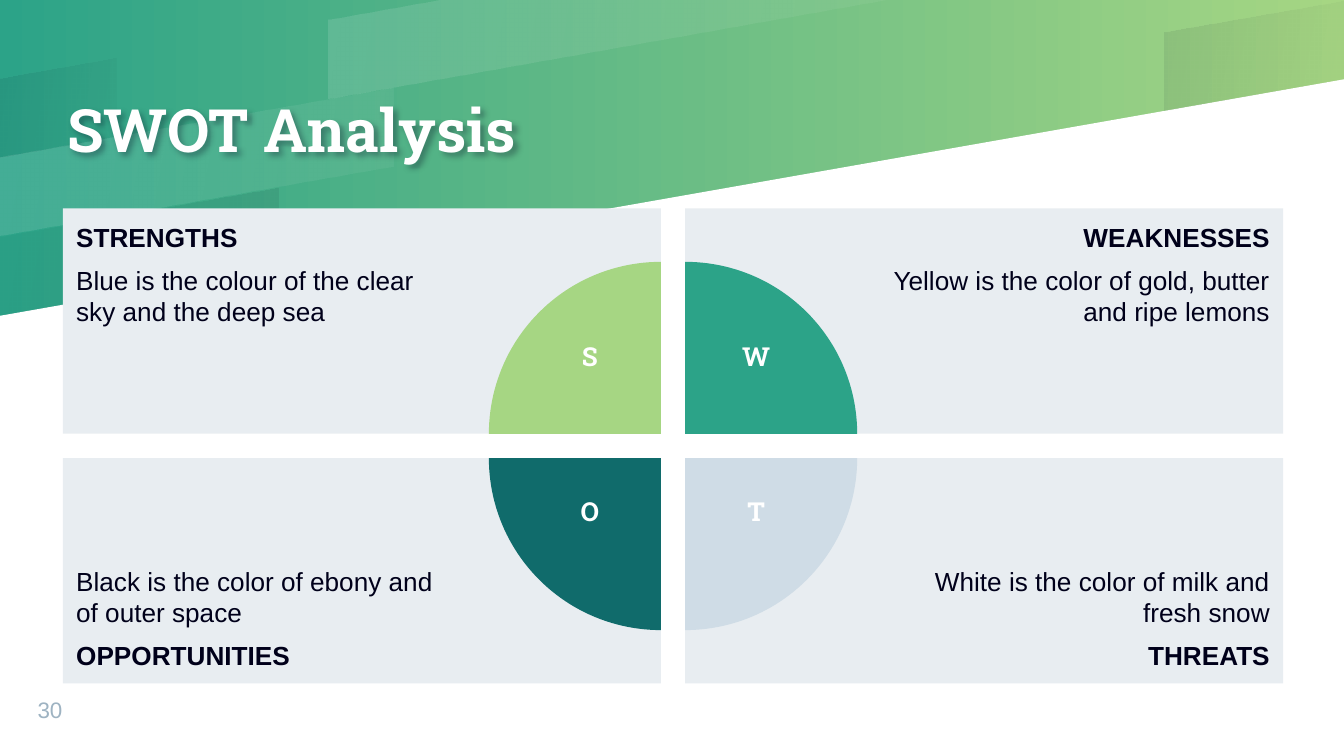
from lxml import etree
from pptx import Presentation
from pptx.dml.color import RGBColor
from pptx.enum.shapes import MSO_SHAPE
from pptx.enum.text import MSO_ANCHOR, PP_ALIGN
from pptx.oxml.ns import qn
from pptx.util import Cm, Pt

RECT, PIE = MSO_SHAPE.RECTANGLE, MSO_SHAPE.PIE
TOP, MIDDLE, BOTTOM = MSO_ANCHOR.TOP, MSO_ANCHOR.MIDDLE, MSO_ANCHOR.BOTTOM
LEFT, CENTER, RIGHT = PP_ALIGN.LEFT, PP_ALIGN.CENTER, PP_ALIGN.RIGHT

WIDE, HIGH = 25.4, 14.29
SLOPE = 0.176
INK, WHITE, GREY = "00001A", "FFFFFF", "E8EDF1"
SANS, SLAB = "Arial", "Roboto Slab"

BANDS = [
    (6.2, 16.83, 0.38, WHITE, 12, 5),
    (0, 2.21, 1.48, INK, 8, 2),
    (0, 5.26, 4.47, INK, 2, 8),
    (22, 25.4, 0.6, INK, 8, 2),
    (0, 7.44, 2.97, WHITE, 12, 5),
]
PARTS = [
    ("STRENGTHS", "Blue is the colour of the clear sky and the deep sea", "A6D683", 0, 0),
    ("WEAKNESSES", "Yellow is the color of gold, butter and ripe lemons", "2CA388", 1, 0),
    ("THREATS", "White is the color of milk and fresh snow", "CFDCE6", 1, 1),
    ("OPPORTUNITIES", "Black is the color of ebony and of outer space", "106B6B", 0, 1),
]


def color(value):
    """Turn a hex string into a colour."""
    return RGBColor.from_string(value)


def clean(shape):
    """Take the line and the shadow off a shape."""
    shape.line.fill.background()
    shape.shadow.inherit = False
    return shape


def paint(shape, value):
    """Give a shape one flat fill."""
    clean(shape).fill.solid()
    shape.fill.fore_color.rgb = color(value)


def blend(fill, first, last, angle=0):
    """Set a gradient of two stops."""
    fill.gradient()
    fill.gradient_angle = angle
    for stop, value in zip(fill.gradient_stops, (first, last)):
        stop.color.rgb = color(value)


def outline(slide, points):
    """Draw a closed outline through points in centimetres."""
    spots = [(Cm(x), Cm(y)) for x, y in points]
    builder = slide.shapes.build_freeform(*spots[0])
    builder.add_line_segments(spots[1:], close=True)
    return builder.convert_to_shape()


def frame(shape, insets, anchor):
    """Set up the text frame of a shape."""
    text = shape.text_frame
    text.word_wrap = True
    text.vertical_anchor = anchor
    text.margin_left, text.margin_top, text.margin_right, text.margin_bottom = map(Cm, insets)
    return text


def write(para, words, size, font, value, bold=False, align=LEFT):
    """Add one run to a paragraph."""
    para.alignment = align
    run = para.add_run()
    run.text = words
    run.font.size, run.font.name, run.font.bold = Pt(size), font, bold
    run.font.color.rgb = color(value)


def label(slide, box, anchor, insets=(0, 0, 0, 0)):
    """Add an empty text box."""
    shape = slide.shapes.add_textbox(*map(Cm, box))
    return shape, frame(shape, insets, anchor).paragraphs[0]


def backdrop(slide, box):
    """Draw the sloping header and its faint bands."""
    left, top, width, height = box
    blend(slide.background.fill, "2CA388", "A6D683")
    base, right, edge = top + height, left + width, top + 1.5
    paint(outline(slide, [(left, base), (right, base), (right, edge),
                          (left, edge + SLOPE * width)]), WHITE)
    for start, end, rise, value, *alphas in BANDS:
        low = rise + 1.49
        turn = min(end, start + rise / SLOPE)
        points = [(start, rise), (start, low), (end, low - SLOPE * (end - start)),
                  (turn, rise - SLOPE * (turn - start))]
        band = clean(outline(slide, [(left + x, top + y) for x, y in points]))
        blend(band.fill, value, value, 350)
        for stop, alpha in zip(band.element.spPr.iter(qn("a:srgbClr")), alphas):
            etree.SubElement(stop, qn("a:alpha"), val=str(alpha * 1000))


def heading(slide, box):
    """Write the title with its soft shadow."""
    shape, para = label(slide, box, MIDDLE)
    para.line_spacing = 0.9
    write(para, "SWOT Analysis", 32, SLAB, WHITE, True)
    effects = etree.SubElement(shape.element.spPr, qn("a:effectLst"))
    shade = etree.SubElement(effects, qn("a:outerShdw"), blurRad="38100",
                             dist="28575", dir="2700000", algn="bl", rotWithShape="0")
    tint = etree.SubElement(shade, qn("a:srgbClr"), val=INK)
    etree.SubElement(tint, qn("a:alpha"), val="30000")


def panel(slide, box, title, body, col, row):
    """Draw one grey panel with its title at the outer edge."""
    shape = slide.shapes.add_shape(RECT, *map(Cm, box))
    paint(shape, GREY)
    insets = (3.81, 0.25, 0.25, 0.25) if col else (0.25, 0.25, 3.81, 0.25)
    text = frame(shape, insets, BOTTOM if row else TOP)
    lines = [(title, True), (body, False)]
    paras = [text.paragraphs[0], text.add_paragraph()]
    for para, (words, bold) in zip(paras, lines[::-1] if row else lines):
        write(para, words, 14, SANS, INK, bold, RIGHT if col else LEFT)
    paras[1].space_before = paras[1].space_after = Pt(6)


def wedge(slide, box, value, turn):
    """Draw one quarter of the wheel within its full circle box."""
    shape = slide.shapes.add_shape(PIE, *map(Cm, box))
    shape.adjustments[0], shape.adjustments[1] = 108, 162
    shape.rotation = turn
    paint(shape, value)


def matrix(slide, box):
    """Lay out the four panels, the wheel and its letters."""
    left, top, width, height = box
    gap, radius = 0.46, 3.25
    wide, high = (width - gap) / 2, (height - gap) / 2
    for title, body, _, col, row in PARTS:
        spot = (left + col * (wide + gap), top + row * (high + gap), wide, high)
        panel(slide, spot, title, body, col, row)
    for index, (title, _, value, col, row) in enumerate(PARTS):
        x, y = left + wide + col * gap, top + high + row * gap
        wedge(slide, (x - radius, y - radius, 2 * radius, 2 * radius), value, 90 * index)
        x += 1.34 if col else -1.34
        y += 1.18 if row else -1.3
        _, para = label(slide, (x - 0.86, y - 0.6, 1.72, 1.2), TOP, (0.25, 0.13, 0.25, 0.13))
        write(para, title[0], 14, SLAB, WHITE, True, CENTER)


def footer(slide, box):
    """Write the page number."""
    _, para = label(slide, box, BOTTOM)
    write(para, "30", 12, SANS, "9EB3C2")


def main():
    """Build and save the slide."""
    deck = Presentation()
    deck.slide_width, deck.slide_height = Cm(WIDE), Cm(HIGH)
    slide = deck.slides.add_slide(deck.slide_layouts[6])
    backdrop(slide, (0, 0, WIDE, HIGH))
    heading(slide, (1.27, 0, 15.24, 5.03))
    footer(slide, (0.71, 12.98, 1.35, 0.69))
    matrix(slide, (1.19, 3.94, 23.06, 8.98))
    deck.save("out.pptx")


if __name__ == "__main__":
    main()
